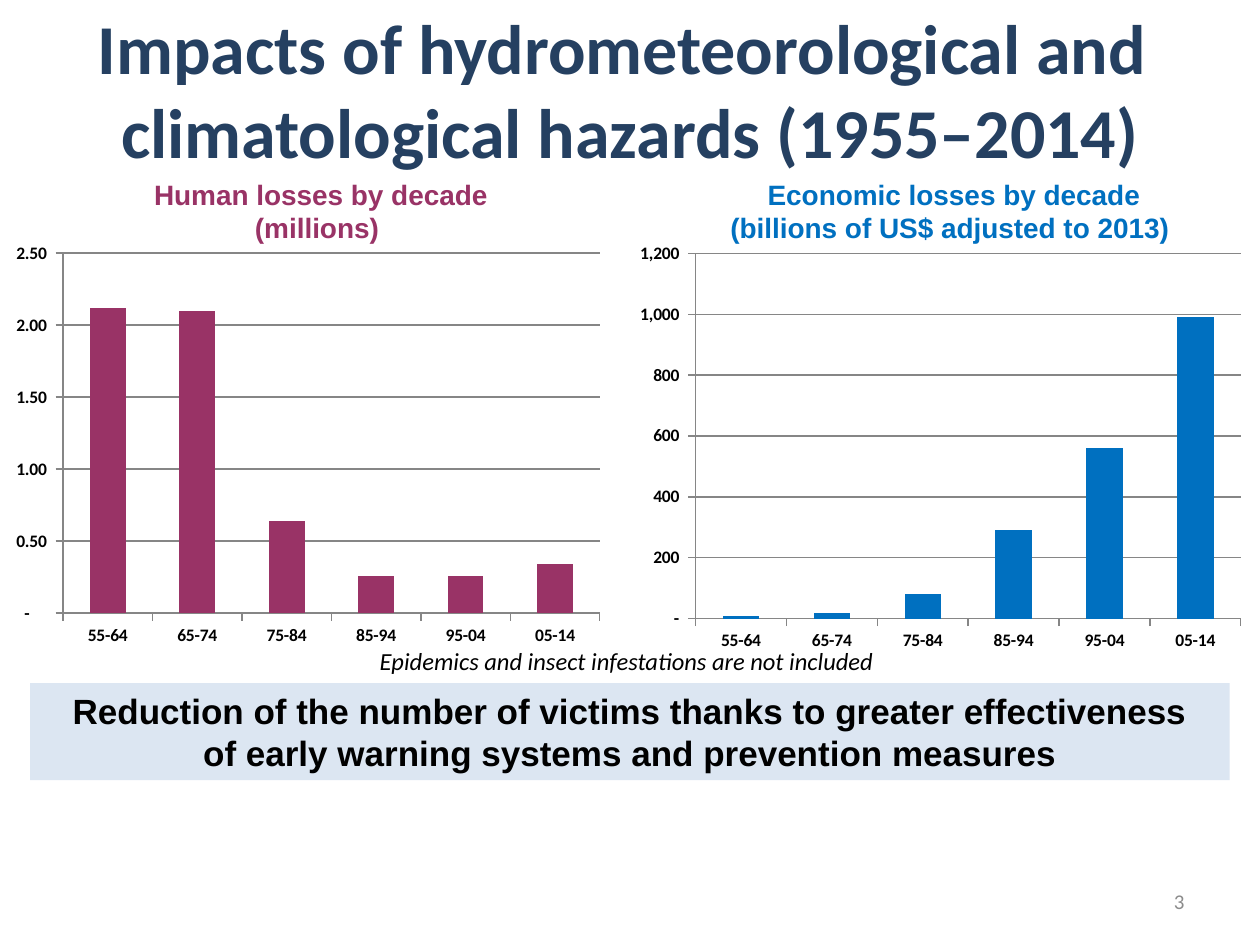
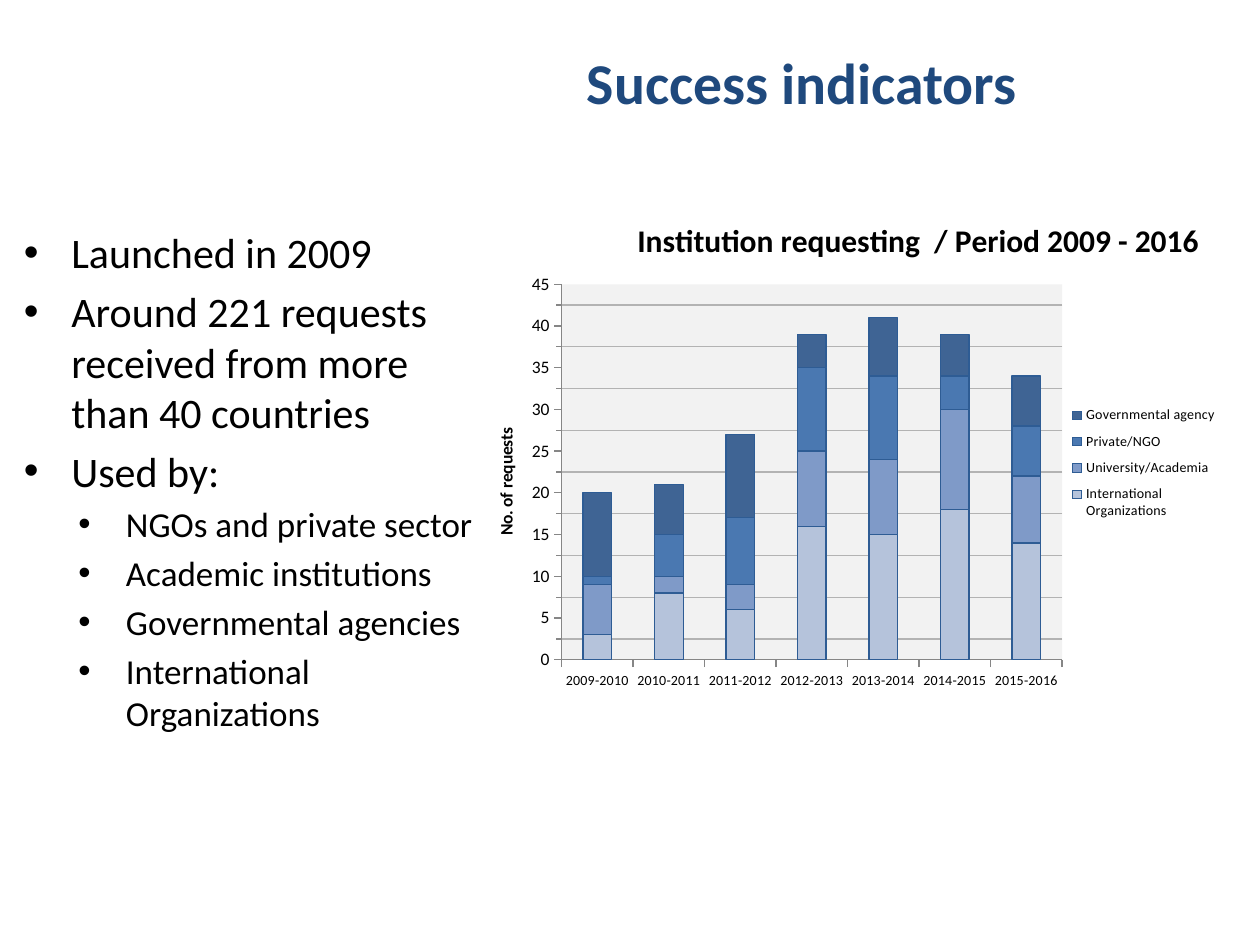
from dataclasses import dataclass

from lxml import etree
from pptx import Presentation
from pptx.chart import data as chart_data
from pptx.dml.color import RGBColor
from pptx.enum import chart as charts, shapes, text
from pptx.oxml import ns
from pptx.util import Cm, Pt


@dataclass(frozen=True)
class Theme:
    heading_font: str = "Arial"
    body_font: str = "Calibri"
    title_navy: str = "254061"
    indicator_blue: str = "1F497D"
    human: str = "993366"
    economic: str = "0070C0"
    band: str = "DCE6F2"
    ink: str = "000000"
    page_grey: str = "8C8C8C"
    axis_grey: str = "868686"
    grid_grey: str = "B3B3B3"
    plot_grey: str = "F2F2F2"
    bar_edge: str = "2E5C94"
    institutions: tuple = ("B5C3DB", "7F9AC8", "4A78B1", "3F6494")
    hazard_title: float = 40
    indicator_title: float = 33
    bullet: float = 24
    message: float = 20
    chart_title: float = 18
    panel_heading: float = 16
    footnote: float = 14
    page: float = 12
    axis: float = 10
    small: float = 8


@dataclass(frozen=True)
class Box:
    left: float
    top: float
    width: float
    height: float

    def inset(self, left, top, width, height):
        return Box(self.left + left, self.top + top, width, height)

    def lengths(self):
        return [Cm(v) for v in (self.left, self.top, self.width, self.height)]


THEME = Theme()
DECADES = ["55-64", "65-74", "75-84", "85-94", "95-04", "05-14"]
PERIODS = [f"{year}-{year + 1}" for year in range(2009, 2016)]
REQUESTS = {
    "International Organizations": (3, 8, 6, 16, 15, 18, 14),
    "University/Academia": (6, 2, 3, 9, 9, 12, 8),
    "Private/NGO": (1, 5, 8, 10, 10, 4, 6),
    "Governmental agency": (10, 6, 10, 4, 7, 5, 6),
}
FACTS = [
    (0, "Launched in 2009"),
    (0, "Around 221 requests received from more than 40 countries"),
    (0, "Used by:"),
    (1, "NGOs and private sector"),
    (1, "Academic institutions"),
    (1, "Governmental agencies"),
    (1, "International Organizations"),
]


def rgb(value):
    return RGBColor.from_string(value)


def style_font(font, size, color=THEME.ink, name=THEME.body_font, bold=False, italic=False):
    font.size = Pt(size)
    font.name = name
    font.bold = bold
    font.italic = italic
    font.color.rgb = rgb(color)


def write_lines(frame, lines, align=text.PP_ALIGN.CENTER, anchor=text.MSO_ANCHOR.TOP, **style):
    frame.word_wrap = True
    frame.vertical_anchor = anchor
    paragraph = frame.paragraphs[0]
    paragraph.alignment = align
    for number, line in enumerate(lines):
        if number:
            paragraph.add_line_break()
        run = paragraph.add_run()
        run.text = line
        style_font(run.font, **style)


def add_label(slide, box, lines, **style):
    label = slide.shapes.add_textbox(*box.lengths())
    write_lines(label.text_frame, lines, **style)


def add_title(slide, box, lines, size, color):
    add_label(slide, box, lines, size=size, color=color, bold=True,
              anchor=text.MSO_ANCHOR.MIDDLE)


def set_layout(element, index, inner=False, **fractions):
    for old in element.findall(ns.qn("c:layout")):
        element.remove(old)
    layout = etree.Element(ns.qn("c:layout"))
    manual = etree.SubElement(layout, ns.qn("c:manualLayout"))
    settings = {"layoutTarget": "inner"} if inner else {}
    settings.update(xMode="edge", yMode="edge", **fractions)
    for tag, value in settings.items():
        etree.SubElement(manual, ns.qn(f"c:{tag}")).set("val", str(value))
    element.insert(index, layout)


def add_solid_fill(parent, color):
    fill = etree.SubElement(parent, ns.qn("a:solidFill"))
    etree.SubElement(fill, ns.qn("a:srgbClr")).set("val", color)


def add_columns(slide, box, kind, categories, series, colors, plot_area, top, step, bold):
    data = chart_data.CategoryChartData()
    data.categories = categories
    for name, values in series.items():
        data.add_series(name, values)
    chart = slide.shapes.add_chart(kind, *box.lengths(), data).chart
    chart.has_title = False
    chart.has_legend = False
    style_font(chart.font, THEME.axis)
    columns = chart.plots[0]
    columns.vary_by_categories = False
    columns.gap_width = 150
    for column, color in zip(columns.series, colors):
        column.format.fill.solid()
        column.format.fill.fore_color.rgb = rgb(color)
    for axis in (chart.category_axis, chart.value_axis):
        axis.major_tick_mark = charts.XL_TICK_MARK.OUTSIDE
        axis.format.line.color.rgb = rgb(THEME.axis_grey)
        style_font(axis.tick_labels.font, THEME.axis, bold=bold)
    chart.value_axis.minimum_scale = 0
    chart.value_axis.maximum_scale = top
    chart.value_axis.major_unit = step
    fractions = dict(zip("xywh", plot_area))
    set_layout(chart._chartSpace.chart.plotArea, 0, inner=True, **fractions)
    return chart


def loss_panel(slide, box, heading_offset, heading, color, values, number_format,
               plot_area, top, step):
    chart = add_columns(slide, box, charts.XL_CHART_TYPE.COLUMN_CLUSTERED, DECADES,
                        {heading[0]: values}, [color], plot_area, top, step, bold=True)
    axis = chart.value_axis
    axis.tick_labels.number_format = number_format
    axis.tick_labels.number_format_is_linked = False
    axis.major_gridlines.format.line.color.rgb = rgb(THEME.axis_grey)
    add_label(slide, box.inset(*heading_offset, 12.34, 1.63), heading,
              size=THEME.panel_heading, color=color, name=THEME.heading_font, bold=True)


def message_band(slide, box, lines):
    band = slide.shapes.add_shape(shapes.MSO_SHAPE.RECTANGLE, *box.lengths())
    band.shadow.inherit = False
    band.fill.solid()
    band.fill.fore_color.rgb = rgb(THEME.band)
    band.line.fill.background()
    write_lines(band.text_frame, lines, size=THEME.message,
                name=THEME.heading_font, bold=True)


def fact_list(slide, box):
    frame = slide.shapes.add_textbox(*box.lengths()).text_frame
    frame.word_wrap = True
    for number, (level, fact) in enumerate(FACTS):
        paragraph = frame.add_paragraph() if number else frame.paragraphs[0]
        size = THEME.message if level else THEME.bullet
        paragraph.level = level
        properties = paragraph._p.get_or_add_pPr()
        properties.set("marL", str(Cm(0.96 + 1.1 * level)))
        properties.set("indent", str(Cm(-0.96)))
        etree.SubElement(properties, ns.qn("a:buFont")).set("typeface", THEME.heading_font)
        etree.SubElement(properties, ns.qn("a:buChar")).set("char", "•")
        if number:
            paragraph.space_before = Pt(size * 0.2)
        run = paragraph.add_run()
        run.text = fact
        style_font(run.font, size)


def write_title(frame, words, size):
    run = frame.paragraphs[0].add_run()
    run.text = words
    style_font(run.font, size, bold=True)


def request_chart(slide, box):
    chart = add_columns(slide, box, charts.XL_CHART_TYPE.COLUMN_STACKED, PERIODS,
                        REQUESTS, THEME.institutions, (0.095, 0.195, 0.679, 0.713),
                        45, 5, bold=False)
    chart.plots[0].overlap = 100
    for institution in chart.plots[0].series:
        institution.format.line.color.rgb = rgb(THEME.bar_edge)
        institution.format.line.width = Pt(0.75)
    style_font(chart.category_axis.tick_labels.font, THEME.small)

    axis = chart.value_axis
    axis.has_major_gridlines = False
    axis.has_minor_gridlines = True
    axis.minor_unit = 2.5
    axis.minor_tick_mark = charts.XL_TICK_MARK.OUTSIDE
    gridlines = axis._element.find(ns.qn("c:minorGridlines"))
    grid_style = etree.SubElement(gridlines, ns.qn("c:spPr"))
    add_solid_fill(etree.SubElement(grid_style, ns.qn("a:ln")), THEME.grid_grey)
    write_title(axis.axis_title.text_frame, "No. of requests", THEME.axis)

    write_title(chart.chart_title.text_frame,
                "Institution requesting  / Period 2009 - 2016", THEME.chart_title)
    heading = chart.chart_title._element
    set_layout(heading, 1, x=0.19, y=0.06)
    heading.find(ns.qn("c:overlay")).set("val", "1")

    chart.has_legend = True
    chart.legend.position = charts.XL_LEGEND_POSITION.RIGHT
    chart.legend.include_in_layout = False
    style_font(chart.legend.font, THEME.small)
    set_layout(chart.legend._element, 1, x=0.78, y=0.41, w=0.21, h=0.25)

    area = chart._chartSpace.chart.plotArea
    add_solid_fill(etree.SubElement(area, ns.qn("c:spPr")), THEME.plot_grey)


def hazards_slide(slide, page):
    add_title(slide, page.inset(1.27, 0.2, 22.86, 3.18),
              ["Impacts of hydrometeorological and ",
               "climatological hazards (1955–2014)"],
              THEME.hazard_title, THEME.title_navy)
    add_label(slide, page.inset(18.2, 17.66, 5.93, 1.01), ["3"], size=THEME.page,
              color=THEME.page_grey, align=text.PP_ALIGN.RIGHT,
              anchor=text.MSO_ANCHOR.MIDDLE)
    loss_panel(slide, page.inset(0, 4.75, 12.34, 8.43), (0.3, -1.3),
               ["Human losses by decade", "(millions) "], THEME.human,
               (2.12, 2.1, 0.64, 0.26, 0.26, 0.34),
               '_(* #,##0.00_);_(* \\(#,##0.00\\);_(* "-"??_);_(@_)',
               (0.103, 0.042, 0.877, 0.861), 2.5, 0.5)
    loss_panel(slide, page.inset(12.6, 4.67, 12.8, 8.56), (0.46, -1.22),
               ["Economic losses by decade", "(billions of US$ adjusted to 2013) "],
               THEME.economic, (10, 20, 80, 290, 560, 990),
               '_(* #,##0_);_(* \\(#,##0\\);_(* "-"_);_(@_)',
               (0.111, 0.051, 0.859, 0.861), 1200, 200)
    message_band(slide, page.inset(0.61, 13.77, 24.18, 1.96),
                 ["Reduction of the number of victims thanks to greater effectiveness",
                  "of early warning systems and prevention measures"])
    add_label(slide, page.inset(2.34, 12.9, 20.7, 0.86),
              ["Epidemics and insect infestations are not included "],
              size=THEME.footnote, italic=True)


def indicators_slide(slide, page):
    add_title(slide, page.inset(7.42, 0.53, 17.5, 2.21), ["Success indicators"],
              THEME.indicator_title, THEME.indicator_blue)
    fact_list(slide, page.inset(0.23, 4.45, 9.68, 13.61))
    request_chart(slide, page.inset(9.91, 3.66, 14.86, 10.62))


def main():
    deck = Presentation()
    page = Box(0, 0, 25.4, 19.05)
    deck.slide_width, deck.slide_height = Cm(page.width), Cm(page.height)
    blank = deck.slide_layouts[6]
    for build in (hazards_slide, indicators_slide):
        build(deck.slides.add_slide(blank), page)
    deck.save("out.pptx")


if __name__ == "__main__":
    main()
